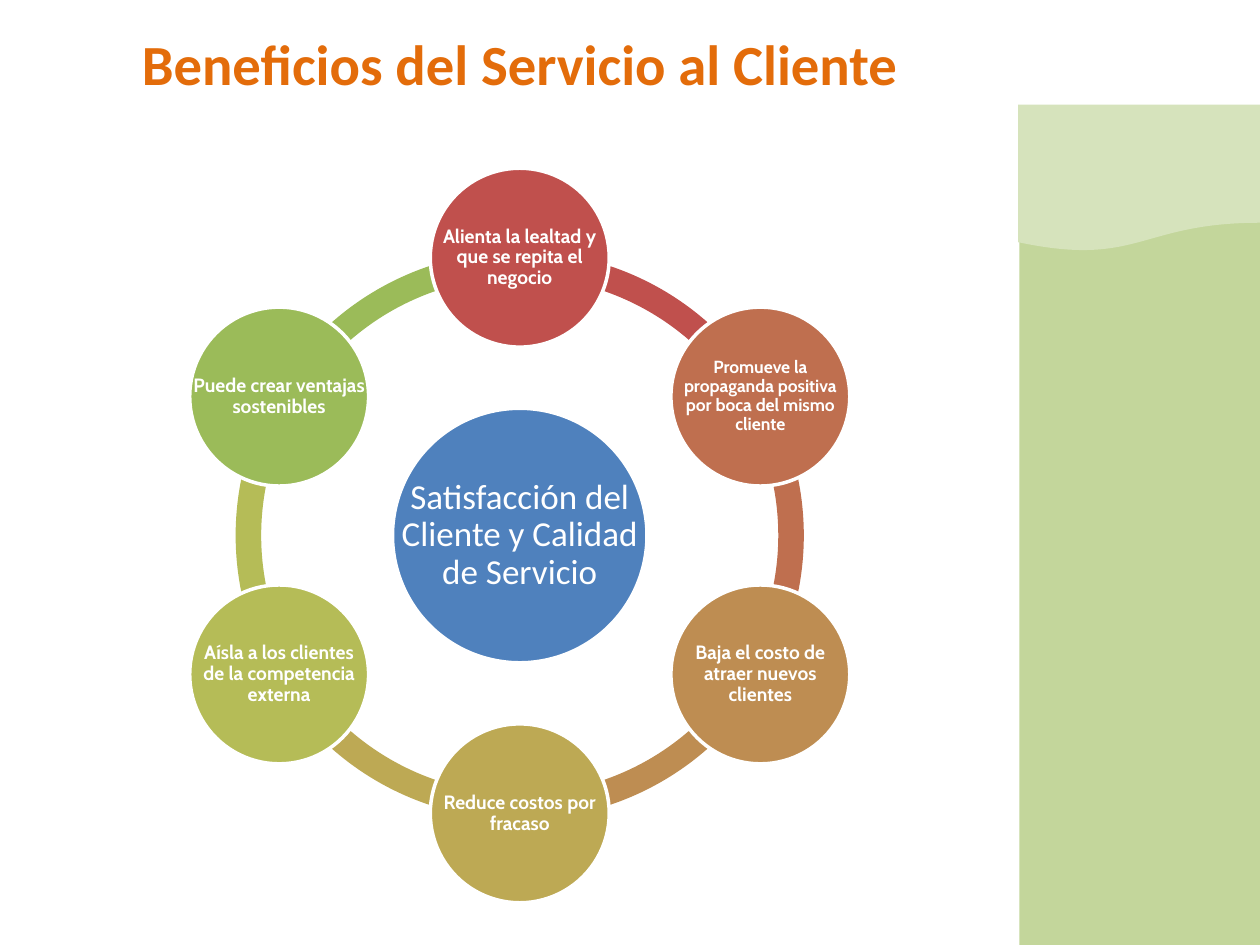
from math import cos, sin, radians
from pptx import Presentation
from pptx.dml.color import RGBColor
from pptx.enum.shapes import MSO_SHAPE as SHAPE
from pptx.enum.text import MSO_ANCHOR as ANCHOR, PP_ALIGN as ALIGN
from pptx.util import Emu, Inches, Pt

COLS, ROWS = 100, 75
CELL = Inches(10) / COLS
CX, CY = 41.25, 42.5
RING_R, NODE_R = 22.05, 7.1
ARC_SIZE, HUB_SIZE = 45.1, 20.2
STEP = 60

BENEFITS = [
    ("Alienta la lealtad y que se repita el negocio", "C0504D", 11),
    ("Promueve la propaganda positiva por boca del mismo cliente", "BF6F4F", 10),
    ("Baja el costo de atraer nuevos clientes", "BE8D52", 11),
    ("Reduce costos por fracaso", "BDA954", 11),
    ("Aísla a los clientes de la competencia externa", "B5BC57", 11),
    ("Puede crear ventajas sostenibles", "9BBB59", 11),
]


def color(value):
    return RGBColor.from_string(value)


def cells(*values):
    return [Emu(round(v * CELL)) for v in values]


def centered(x, y, size):
    return x - size / 2, y - size / 2, size, size


def add_shape(s, kind, box, fill, line=None):
    sp = s.shapes.add_shape(kind, *cells(*box))
    sp.shadow.inherit = False
    sp.fill.solid()
    sp.fill.fore_color.rgb = color(fill)
    if line:
        sp.line.color.rgb = color(line)
        sp.line.width = Pt(2)
    else:
        sp.line.fill.background()
    return sp


def add_text(s, text, box, size, font="Calibri", fill="FFFFFF", bold=False,
             spacing=0.9, inset=0.2):
    tf = s.shapes.add_textbox(*cells(*box)).text_frame
    tf.word_wrap = True
    tf.vertical_anchor = ANCHOR.MIDDLE
    tf.margin_left = tf.margin_right = tf.margin_top = tf.margin_bottom = cells(inset)[0]
    p = tf.paragraphs[0]
    p.alignment = ALIGN.CENTER
    p.line_spacing = spacing
    r = p.add_run()
    r.text = text
    r.font.name = font
    r.font.size = Pt(size)
    r.font.bold = bold
    r.font.color.rgb = color(fill)


def add_arc(s, start, fill):
    sp = add_shape(s, SHAPE.BLOCK_ARC, centered(CX, CY, ARC_SIZE), fill)
    sp.adjustments[0] = start % 360 * 0.6
    sp.adjustments[1] = (start + STEP) % 360 * 0.6
    sp.adjustments[2] = 0.045


def add_circle(s, text, box, fill, size, **fmt):
    add_shape(s, SHAPE.OVAL, box, fill, line="FFFFFF")
    add_text(s, text, box, size, **fmt)


def add_side_panel(s):
    add_shape(s, SHAPE.RECTANGLE, (80.9, 11.1, COLS - 80.9, ROWS - 11.1), "C3D69B")
    add_shape(s, SHAPE.FLOWCHART_DOCUMENT, (80.8, 8.3, COLS - 80.8, 11.7), "D6E3BC")


def add_cycle(s):
    angles = [STEP * i - 90 for i in range(len(BENEFITS))]
    for angle, (_, fill, _) in reversed(list(zip(angles, BENEFITS))):
        add_arc(s, angle, fill)
    add_circle(s, "Satisfacción del Cliente y Calidad de Servicio",
               centered(CX, CY, HUB_SIZE), "4F81BD", 20, inset=0.3)
    for angle, (text, fill, size) in zip(angles, BENEFITS):
        x = CX + RING_R * cos(radians(angle))
        y = CY + RING_R * sin(radians(angle))
        add_circle(s, text, centered(x, y, 2 * NODE_R), fill, size,
                   font="Cabin", bold=True)


def main():
    prs = Presentation()
    prs.slide_width, prs.slide_height = cells(COLS, ROWS)
    s = prs.slides.add_slide(prs.slide_layouts[6])
    add_side_panel(s)
    add_text(s, "Beneficios del Servicio al Cliente", (8.3, 0.3, 65.9, 9.4), 32.4,
             fill="E36C0A", bold=True, spacing=1.0, inset=0.5)
    add_cycle(s)
    prs.save("out.pptx")


if __name__ == "__main__":
    main()
